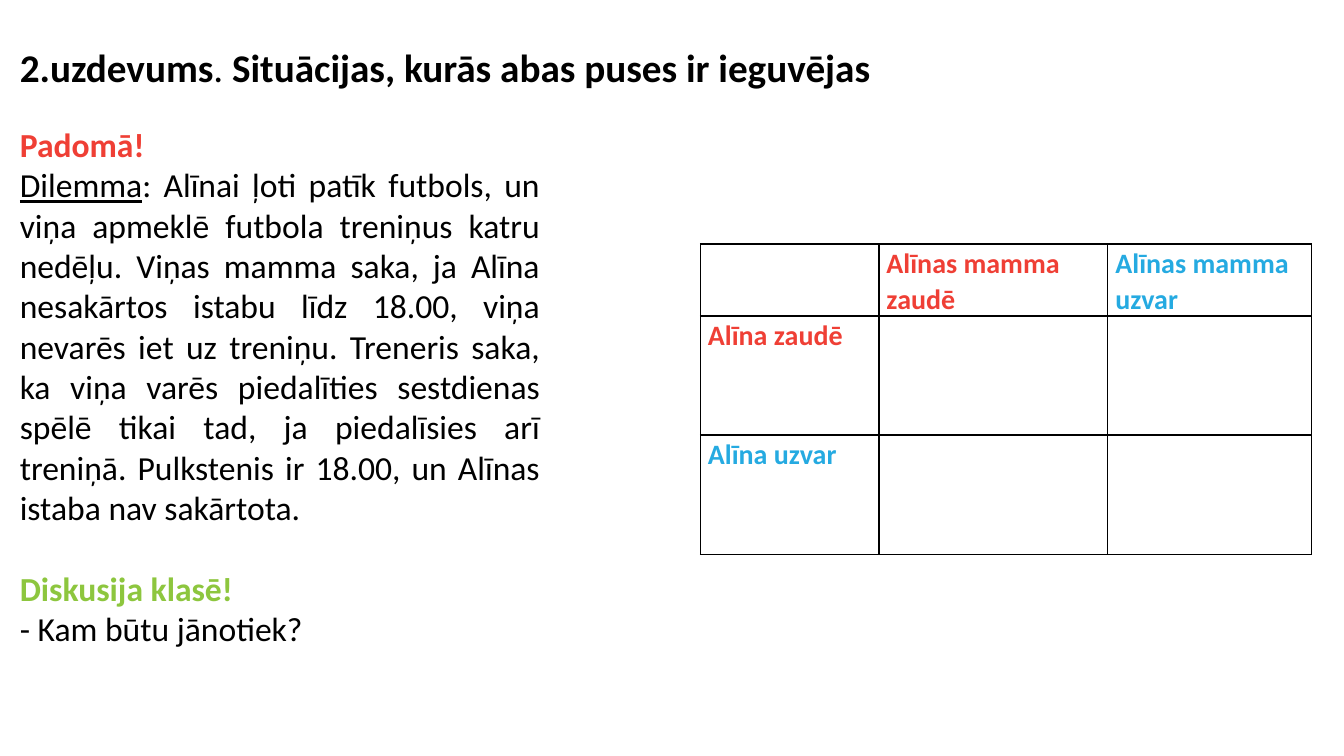
from dataclasses import dataclass

from lxml import etree
from pptx import Presentation
from pptx import util as u
from pptx.dml import color as c
from pptx.enum import text as t
from pptx.oxml import ns

HUES = {"black": "000000", "red": "EF3F35", "green": "8DC63E", "blue": "25AAE1"}
FONT = "Calibri"
COLS = (4.5, 5.77, 5.13)
ROWS = (1.8, 3, 3)


@dataclass(frozen=True)
class Bit:
    text: str
    hue: str = "black"
    bold: bool = False
    line: bool = False


@dataclass(frozen=True)
class Para:
    bits: tuple[Bit, ...]
    gap: float = 0


@dataclass(frozen=True)
class Box:
    left: float
    top: float
    width: float
    height: float
    size: int
    align: t.PP_ALIGN
    paras: tuple[Para, ...]


@dataclass(frozen=True)
class Label:
    row: int
    col: int
    bit: Bit


TITLE = Box(0.25, 0.97, 27.81, 1.45, 28, t.PP_ALIGN.LEFT, (
    Para((
        Bit("2.uzdevums", bold=True),
        Bit(". "),
        Bit("Situācijas, kurās abas puses ir ieguvējas", bold=True),
    )),
))
STORY = Box(0.25, 3, 13.61, 13.59, 24, t.PP_ALIGN.JUSTIFY, (
    Para((Bit("Padomā!", "red", True),)),
    Para((
        Bit("Dilemma", line=True),
        Bit(": Alīnai ļoti patīk futbols, un viņa apmeklē futbola treniņus "
            "katru nedēļu. Viņas mamma saka, ja Alīna nesakārtos istabu līdz "
            "18.00, viņa nevarēs iet uz treniņu. Treneris saka, ka viņa varēs "
            "piedalīties sestdienas spēlē tikai tad, ja piedalīsies arī "
            "treniņā. Pulkstenis ir 18.00, un Alīnas istaba nav sakārtota."),
    )),
    Para((Bit("Diskusija klasē!", "green", True),), gap=29),
    Para((Bit("- Kam būtu jānotiek?"),)),
))
LABELS = (
    Label(0, 1, Bit("Alīnas mamma zaudē", "red", True)),
    Label(0, 2, Bit("Alīnas mamma uzvar", "blue", True)),
    Label(1, 0, Bit("Alīna zaudē", "red", True)),
    Label(2, 0, Bit("Alīna uzvar", "blue", True)),
)


def style(run, bit: Bit, size: int) -> None:
    font = run.font
    font.name, font.size = FONT, u.Pt(size)
    font.bold, font.underline = bit.bold, bit.line
    font.color.rgb = c.RGBColor.from_string(HUES[bit.hue])


def add_box(slide, box: Box) -> None:
    area = [u.Cm(n) for n in (box.left, box.top, box.width, box.height)]
    frame = slide.shapes.add_textbox(*area).text_frame
    frame.word_wrap = True
    frame.auto_size = t.MSO_AUTO_SIZE.SHAPE_TO_FIT_TEXT
    frame.text = "\n".join(para.bits[0].text for para in box.paras)
    for line, para in zip(frame.paragraphs, box.paras):
        line.alignment = box.align
        if para.gap:
            line.space_before = u.Pt(para.gap)
        for bit in para.bits[1:]:
            line.add_run().text = bit.text
        for run, bit in zip(line.runs, para.bits):
            style(run, bit, box.size)


def add_edges(cell) -> None:
    props = cell._tc.get_or_add_tcPr()
    for side in "LRTB":
        edge = etree.SubElement(props, ns.qn(f"a:ln{side}"), w=str(u.Pt(1)))
        fill = etree.SubElement(edge, ns.qn("a:solidFill"))
        etree.SubElement(fill, ns.qn("a:srgbClr"), val=HUES["black"])
    cell.fill.background()


def add_grid(slide) -> None:
    grid = slide.shapes.add_table(
        len(ROWS), len(COLS), u.Cm(17.65), u.Cm(6.15),
        u.Cm(sum(COLS)), u.Cm(sum(ROWS))).table
    grid.first_row = grid.horz_banding = False
    for col, width in zip(grid.columns, COLS):
        col.width = u.Cm(width)
    for row, height in zip(grid.rows, ROWS):
        row.height = u.Cm(height)
    for cell in grid.iter_cells():
        cell.margin_left = cell.margin_right = u.Cm(0.19)
        cell.margin_top = cell.margin_bottom = 0
        add_edges(cell)
    for label in LABELS:
        frame = grid.cell(label.row, label.col).text_frame
        frame.text = label.bit.text
        line = frame.paragraphs[0]
        line.line_spacing = 1.07
        style(line.runs[0], label.bit, 20)


def main() -> None:
    deck = Presentation()
    deck.slide_width, deck.slide_height = u.Cm(33.87), u.Cm(19.05)
    slide = deck.slides.add_slide(deck.slide_layouts[6])
    for box in (TITLE, STORY):
        add_box(slide, box)
    add_grid(slide)
    deck.save("out.pptx")


if __name__ == "__main__":
    main()
